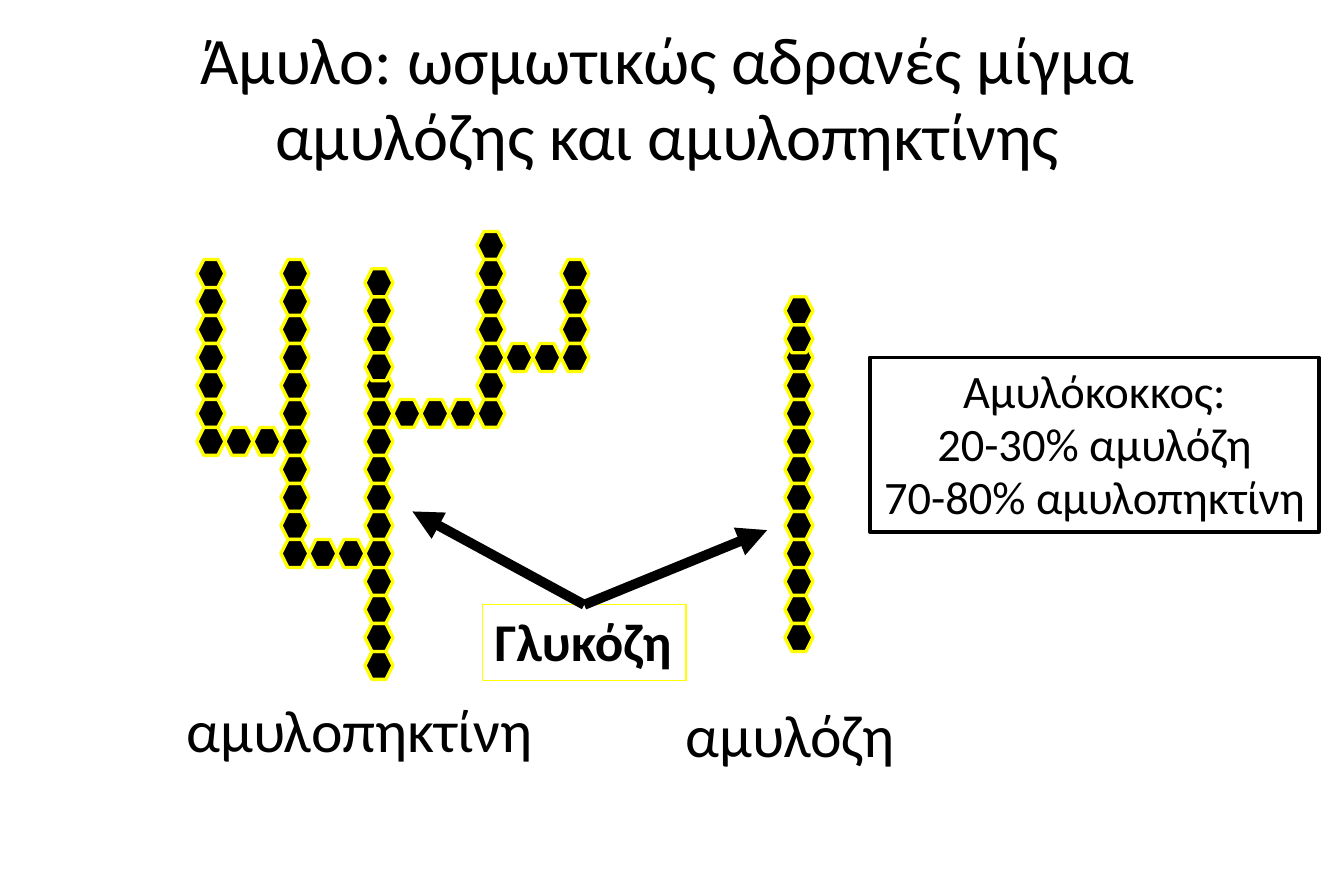
from dataclasses import dataclass
from typing import Optional

import lxml.etree
import pptx
import pptx.dml.color
import pptx.enum.shapes
import pptx.enum.text
import pptx.oxml.ns
import pptx.util

EMU_PER_PX = 914400 / 128
UNIT = 30  # side of one glucose hexagon, and the pitch of the grid
GRID_LEFT, GRID_TOP = 211, 248
FONT = "Calibri"
COLORS = {"ink": "000000", "edge": "FFFF00"}

SHAPE = pptx.enum.shapes.MSO_SHAPE
ALIGN = pptx.enum.text.PP_ALIGN
UP, DOWN, RIGHT = (0, -1), (0, 1), (1, 0)


@dataclass(frozen=True)
class Chain:
    """A straight run of glucose units, starting at a grid cell."""
    column: int
    row: int
    step: tuple[int, int]
    count: int
    drop: int = 0


@dataclass(frozen=True)
class Caption:
    lines: tuple[str, ...]
    box: tuple[int, int, int, int]
    size: int
    bold: bool = False
    centred: bool = False
    wrap: bool = False
    outline: Optional[str] = None
    outline_pt: float = 0


AMYLOPECTIN_TRUNK = [
    Chain(6, 15, UP, 11),
    Chain(7, 6, RIGHT, 4),
    Chain(10, 5, UP, 2),
    Chain(6, 4, UP, 4, drop=10),
]
AMYLOSE = [
    Chain(21, 14, UP, 11),
    Chain(21, 3, UP, 2, drop=10),
]
AMYLOPECTIN_BRANCHES = [
    Chain(11, 4, RIGHT, 3),
    Chain(13, 3, UP, 3),
    Chain(3, 9, DOWN, 3),
    Chain(4, 11, RIGHT, 2),
    Chain(3, 8, UP, 4),
    Chain(0, 5, DOWN, 3),
    Chain(1, 7, RIGHT, 2),
    Chain(0, 4, UP, 4),
    Chain(3, 4, UP, 4),
    Chain(10, 3, UP, 4),
]

TITLE = Caption(("Άμυλο: ωσμωτικώς αδρανές μίγμα αμυλόζης και αμυλοπηκτίνης",),
                (125, 17, 1180, 179), 40, centred=True, wrap=True)
AMYLOSE_NAME = Caption(("αμυλόζη",), (722, 744, 251, 90), 36)
AMYLOPECTIN_NAME = Caption(("αμυλοπηκτίνη",), (187, 739, 399, 90), 36)
GLUCOSE = Caption(("Γλυκόζη",), (517, 648, 218, 81), 32, bold=True,
                  outline="edge", outline_pt=0.75)
STARCH_GRAIN = Caption(("Αμυλόκοκκος:", "20-30% αμυλόζη", "70-80% αμυλοπηκτίνη"),
                       (932, 383, 481, 187), 28, centred=True,
                       outline="ink", outline_pt=2.25)
ARROW_TIPS = [(442, 548), (822, 568)]


def px(length: int) -> pptx.util.Emu:
    return pptx.util.Emu(round(length * EMU_PER_PX))


def color(name: str) -> pptx.dml.color.RGBColor:
    return pptx.dml.color.RGBColor.from_string(COLORS[name])


def draw_chain(slide, chain: Chain) -> None:
    for i in range(chain.count):
        left = GRID_LEFT + UNIT * (chain.column + i * chain.step[0])
        top = GRID_TOP + UNIT * (chain.row + i * chain.step[1]) + chain.drop
        glucose = slide.shapes.add_shape(SHAPE.HEXAGON, px(left), px(top), px(UNIT), px(UNIT))
        glucose.adjustments[0] = 0.25
        glucose.shadow.inherit = False
        glucose.fill.solid()
        glucose.fill.fore_color.rgb = color("ink")
        glucose.line.color.rgb = color("edge")
        glucose.line.width = pptx.util.Pt(2)


def draw_caption(slide, caption: Caption):
    place = [px(length) for length in caption.box]
    if caption.outline:
        holder = slide.shapes.add_shape(SHAPE.RECTANGLE, *place)
        holder.shadow.inherit = False
        holder.fill.background()
        holder.line.color.rgb = color(caption.outline)
        holder.line.width = pptx.util.Pt(caption.outline_pt)
    else:
        holder = slide.shapes.add_textbox(*place)

    frame = holder.text_frame
    frame.word_wrap = caption.wrap
    frame.auto_size = pptx.enum.text.MSO_AUTO_SIZE.SHAPE_TO_FIT_TEXT
    frame.vertical_anchor = pptx.enum.text.MSO_ANCHOR.TOP
    frame.margin_left = frame.margin_right = px(13)
    frame.margin_top, frame.margin_bottom = px(9), px(6)
    for i, line in enumerate(caption.lines):
        paragraph = frame.add_paragraph() if i else frame.paragraphs[0]
        paragraph.alignment = ALIGN.CENTER if caption.centred else ALIGN.LEFT
        paragraph.line_spacing = 0.95
        run = paragraph.add_run()
        run.text = line
        run.font.name = FONT
        run.font.size = pptx.util.Pt(caption.size)
        run.font.bold = caption.bold
        run.font.color.rgb = color("ink")
    return holder


def draw_arrow(slide, source, tip: tuple[int, int]) -> None:
    end_x, end_y = px(tip[0]), px(tip[1])
    arrow = slide.shapes.add_connector(
        pptx.enum.shapes.MSO_CONNECTOR.STRAIGHT,
        source.left + source.width // 2, source.top, end_x, end_y)
    arrow.begin_connect(source, 0)
    arrow.line.color.rgb = color("ink")
    arrow.line.width = pptx.util.Pt(6)
    qn = pptx.oxml.ns.qn
    properties = arrow.line._get_or_add_ln().getparent()
    lxml.etree.SubElement(properties.find(qn("a:ln")), qn("a:tailEnd"), type="triangle")
    lxml.etree.SubElement(properties, qn("a:effectLst"))


def main() -> None:
    deck = pptx.Presentation()
    deck.slide_width, deck.slide_height = px(1440), px(960)
    slide = deck.slides.add_slide(deck.slide_layouts[6])

    # Title
    draw_caption(slide, TITLE)

    # Starch molecules
    for chain in AMYLOPECTIN_TRUNK + AMYLOSE + AMYLOPECTIN_BRANCHES:
        draw_chain(slide, chain)

    # Molecule names
    draw_caption(slide, AMYLOSE_NAME)
    draw_caption(slide, AMYLOPECTIN_NAME)

    # Glucose label pointing at both molecules
    glucose_label = draw_caption(slide, GLUCOSE)
    for tip in ARROW_TIPS:
        draw_arrow(slide, glucose_label, tip)

    # Make-up of the starch grain
    draw_caption(slide, STARCH_GRAIN)

    deck.save("out.pptx")


if __name__ == "__main__":
    main()
